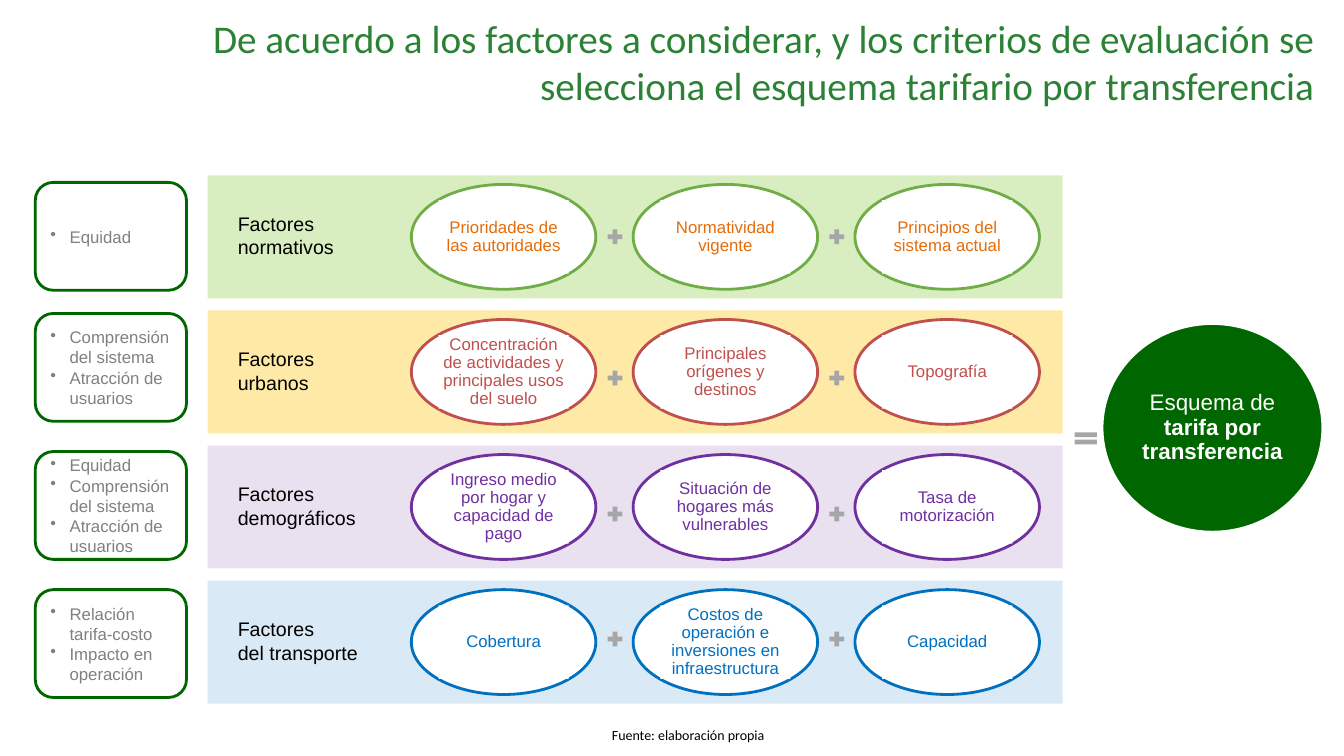
from lxml import etree
from pptx import Presentation
from pptx import util as u
from pptx.dml.color import RGBColor
from pptx.enum import shapes, text
from pptx.oxml.ns import qn

TITLE = ("De acuerdo a los factores a considerar, y los criterios de evaluación se "
         "selecciona el esquema tarifario por transferencia")
SOURCE = "Fuente: elaboración propia"
RESULT = [("Esquema de ", False), ("tarifa por transferencia", True)]
ROWS = [
    {"label": "Factores normativos", "band": ("92D050", 35), "ring": "70AD47", "ink": "E46C0A",
     "criteria_top": 1.81, "plus_top": 2.25, "criteria": ["Equidad"],
     "factors": ["Prioridades de las autoridades", "Normatividad vigente",
                 "Principios del sistema actual"]},
    {"label": "Factores urbanos", "band": ("FFC000", 35), "ring": "C0504D", "ink": "C0504D",
     "criteria_top": 3.11, "plus_top": 3.65,
     "criteria": ["Comprensión del sistema", "Atracción de usuarios"],
     "factors": ["Concentración de actividades y principales usos del suelo",
                 "Principales orígenes y destinos", "Topografía"]},
    {"label": "Factores demográficos", "band": ("7030A0", 15), "ring": "7030A0", "ink": "7030A0",
     "criteria_top": 4.48, "plus_top": 5,
     "criteria": ["Equidad", "Comprensión del sistema", "Atracción de usuarios"],
     "factors": ["Ingreso medio por hogar y capacidad de pago",
                 "Situación de hogares más vulnerables", "Tasa de motorización"]},
    {"label": "Factores\ndel transporte", "band": ("0070C0", 15), "ring": "0070C0",
     "ink": "0070C0", "criteria_top": 5.85, "plus_top": 6.24,
     "criteria": ["Relación tarifa-costo", "Impacto en operación"],
     "factors": ["Cobertura", "Costos de operación e inversiones en infraestructura",
                 "Capacidad"]},
]
WHITE, GREEN, GRAY = "FFFFFF", "006600", "A6A6A6"
BAND_LEFT, BAND_TOP, BAND_PITCH = 2.06, 1.74, 1.34
OVAL_LEFT, OVAL_PITCH, OVAL_DROP = 4.08, 2.2, 0.09
KIND = shapes.MSO_SHAPE
ALIGN = text.PP_ALIGN


def color(value):
    return RGBColor.from_string(value)


def add_shape(page, kind, place, fill=None, line=None):
    shape = page.shapes.add_shape(kind, *map(u.Inches, place))
    shape.shadow.inherit = False
    if fill:
        shape.fill.solid()
        shape.fill.fore_color.rgb = color(fill)
    else:
        shape.fill.background()
    if line:
        shape.line.color.rgb = color(line)
        shape.line.width = u.Pt(2)
    else:
        shape.line.fill.background()
    return shape


def write(shape, paragraphs, size, ink, align=ALIGN.LEFT, font="Arial",
          anchor=text.MSO_ANCHOR.MIDDLE, spacing=None, inset=None):
    frame = shape.text_frame
    frame.word_wrap = True
    frame.vertical_anchor = anchor
    if inset is not None:
        frame.margin_left = frame.margin_right = u.Inches(inset)
        frame.margin_top = frame.margin_bottom = u.Inches(inset)
    for index, spans in enumerate(paragraphs):
        para = frame.add_paragraph() if index else frame.paragraphs[0]
        para.alignment = align
        para.line_spacing = spacing
        para.font.size, para.font.name = u.Pt(size), font
        para.font.color.rgb = color(ink)
        for words, bold in spans:
            span = para.add_run()
            span.text = words
            span.font.bold = bold or None
    return frame


def plain(lines):
    return [[(line, False)] for line in lines]


def add_text(page, place, lines, size, ink, **style):
    box = page.shapes.add_textbox(*map(u.Inches, place))
    write(box, plain(lines), size, ink, **style)


def add_oval(page, place, fill, line, inner, paragraphs, size, ink):
    """Draw an ellipse with a centred text panel of the given inner size."""
    left, top, width, height = place
    add_shape(page, KIND.OVAL, place, fill, line)
    panel = (left + (width - inner[0]) / 2, top + (height - inner[1]) / 2, *inner)
    write(add_shape(page, KIND.RECTANGLE, panel, fill), paragraphs, size, ink,
          ALIGN.CENTER, spacing=0.9, inset=0.01)


def add_criteria(page, top, items):
    box = add_shape(page, KIND.ROUNDED_RECTANGLE, (0.35, top, 1.5, 1.07), line=GREEN)
    frame = write(box, plain(items), 12, "808080")
    for para in frame.paragraphs:
        settings = para._p.get_or_add_pPr()
        settings.set("marL", str(u.Inches(0.19)))
        settings.set("indent", str(u.Inches(-0.19)))
        bullet = etree.Element(qn("a:buChar"), char="•")
        settings.insert_element_before(bullet, "a:tabLst", "a:defRPr", "a:extLst")


def add_row(page, index, row):
    top = BAND_TOP + index * BAND_PITCH
    tint, opacity = row["band"]
    band = add_shape(page, KIND.RECTANGLE, (BAND_LEFT, top, 8.48, 1.22), tint)
    tone = band._element.spPr.find(qn("a:solidFill"))[0]
    etree.SubElement(tone, qn("a:alpha"), val=str(opacity * 1000))
    add_text(page, (BAND_LEFT + 0.2, top + 0.31, 1.42, 0.57),
             row["label"].split("\n"), 14, "000000")
    for column, factor in enumerate(row["factors"]):
        left = OVAL_LEFT + column * OVAL_PITCH
        add_oval(page, (left, top + OVAL_DROP, 1.83, 1.04), WHITE, row["ring"],
                 (1.29, 0.73), plain([factor]), 12, row["ink"])
        if column:
            add_shape(page, KIND.MATH_PLUS, (left - 0.28, row["plus_top"], 0.2, 0.2), GRAY)
    add_criteria(page, row["criteria_top"], row["criteria"])


def main():
    deck = Presentation()
    deck.slide_width, deck.slide_height = u.Inches(13.33), u.Inches(7.5)
    page = deck.slides.add_slide(deck.slide_layouts[6])
    add_text(page, (0.77, 0.13, 12.36, 0.99), [TITLE], 28, "2B8134",
             align=ALIGN.RIGHT, font="Calibri", anchor=text.MSO_ANCHOR.BOTTOM)
    for index, row in enumerate(ROWS):
        add_row(page, index, row)
    add_shape(page, KIND.MATH_EQUAL, (10.62, 4.25, 0.3, 0.2), GRAY)
    add_oval(page, (10.93, 3.21, 2.19, 2.07), GREEN, WHITE, (1.44, 1.35), [RESULT], 16, WHITE)
    add_text(page, (5.96, 7.14, 1.73, 0.28), [SOURCE], 10, "000000",
             align=ALIGN.CENTER, font="Calibri", spacing=1.07)
    deck.save("out.pptx")


if __name__ == "__main__":
    main()
